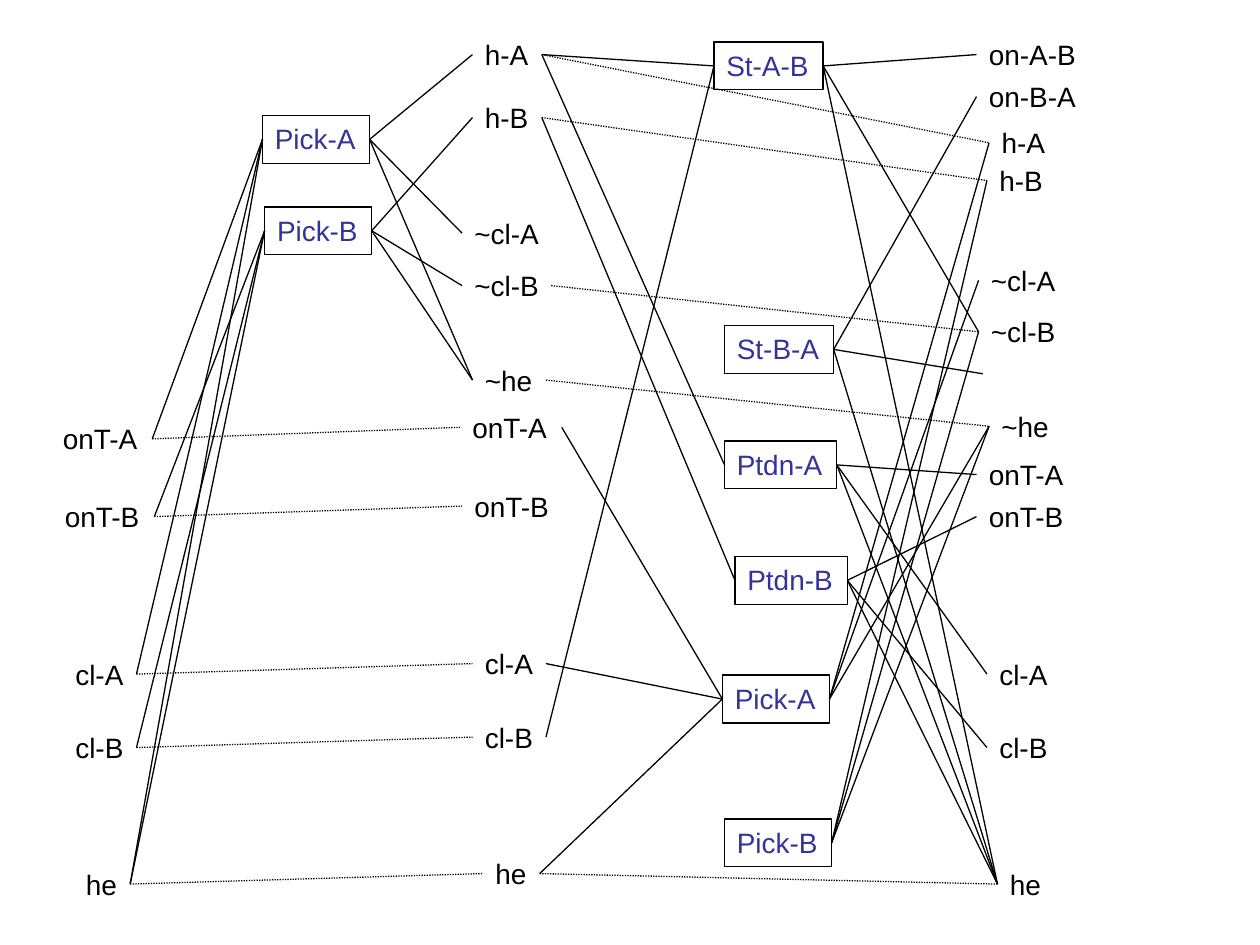
from lxml.etree import SubElement
from pptx import Presentation
from pptx.dml.color import RGBColor
from pptx.enum.dml import MSO_LINE
from pptx.enum.shapes import MSO_CONNECTOR, MSO_SHAPE
from pptx.enum.text import MSO_ANCHOR, MSO_AUTO_SIZE, PP_ALIGN
from pptx.oxml.ns import qn
from pptx.util import Inches, Pt

BLACK = RGBColor(0x00, 0x00, 0x00)
INDIGO = RGBColor(0x33, 0x33, 0x99)
LEFT, RIGHT = 1, 3
COLUMNS, ROWS = 120, 90

WIDTHS = {
    "onT": 9.7, "cl": 7, "he": 5.4, "h": 6.6, "~cl": 8.5, "~he": 7, "on": 10.7,
    "Pick": 10.2, "St": 10.4, "Ptdn": 10.7,
}

START_FACTS = {
    "onT-A": (4.8, 39.6), "onT-B": (5, 47), "cl-A": (6, 62), "cl-B": (6, 69),
    "he": (7, 82),
}
FIRST_ACTIONS = {"Pick-A": (25, 11), "Pick-B": (25.2, 19.7)}
MIDDLE_FACTS = {
    "h-A": (45, 3), "h-B": (45, 9), "~cl-A": (44, 20), "~cl-B": (44, 25),
    "~he": (45, 34), "onT-A": (43.8, 38.5), "onT-B": (44, 46),
    "cl-A": (45, 61), "cl-B": (45, 68), "he": (46, 81),
}
SECOND_ACTIONS = {
    "St-A-B": (68, 4), "St-B-A": (69, 31), "Ptdn-A": (69, 42),
    "Ptdn-B": (70, 53), "Pick-A": (68.8, 64.3), "Pick-B": (69, 78),
}
END_FACTS = {
    "on-A-B": (93, 3), "on-B-A": (93, 7), "h-A": (94.2, 11.4), "h-B": (94, 15),
    "~cl-A": (93.2, 24.5), "~cl-B": (93.2, 29.4), "~he": (94.2, 38.4),
    "onT-A": (93, 43), "onT-B": (93, 47), "cl-A": (94, 62), "cl-B": (94, 69),
    "he": (95, 82),
}

FIRST_NEEDS = {
    "onT-A": ["Pick-A"], "onT-B": ["Pick-B"], "cl-A": ["Pick-A"],
    "cl-B": ["Pick-B"], "he": ["Pick-A", "Pick-B"],
}
FIRST_EFFECTS = {
    "Pick-A": ["h-A", "~cl-A", "~he"], "Pick-B": ["h-B", "~cl-B", "~he"],
}
SECOND_NEEDS = {
    "h-A": ["St-A-B", "Ptdn-A"], "h-B": ["Ptdn-B"], "cl-B": ["St-A-B"],
    "onT-A": ["Pick-A"], "cl-A": ["Pick-A"], "he": ["Pick-A"],
}
SECOND_EFFECTS = {
    "St-A-B": ["on-A-B", "~cl-B", "he"], "St-B-A": ["on-B-A", "he"],
    "Ptdn-A": ["onT-A", "cl-A", "he"], "Ptdn-B": ["onT-B", "cl-B", "he"],
    "Pick-A": ["h-A", "~cl-A", "~he"], "Pick-B": ["h-B", "~cl-B", "~he"],
}
FIRST_KEPT = {name: [name] for name in START_FACTS}
SECOND_KEPT = {name: [name] for name in ("h-A", "h-B", "~cl-B", "~he", "he")}
LOOSE_END = (93.6, 35.6)


class PlanGraph:
    font_name = "Arial"
    font_size = Pt(16)
    line_width = Pt(0.75)
    fact_height = 4.4
    action_height = 4.56

    def __init__(self, prs):
        self.slide = prs.slides.add_slide(prs.slide_layouts[6])
        self.column = prs.slide_width / COLUMNS
        self.row = prs.slide_height / ROWS

    def place(self, x, y):
        return round(x * self.column), round(y * self.row)

    def label(self, sp, name, color):
        tf = sp.text_frame
        tf.word_wrap = False
        tf.auto_size = MSO_AUTO_SIZE.SHAPE_TO_FIT_TEXT
        tf.vertical_anchor = MSO_ANCHOR.TOP
        p = tf.paragraphs[0]
        p.text = name
        p.alignment = PP_ALIGN.LEFT
        p.font.name = self.font_name
        p.font.size = self.font_size
        p.font.color.rgb = color

    def frame(self, name, spot, height):
        width = WIDTHS[name.partition("-")[0]]
        return *self.place(*spot), *self.place(width, height)

    def fact(self, name, spot):
        sp = self.slide.shapes.add_textbox(*self.frame(name, spot, self.fact_height))
        self.label(sp, name, BLACK)
        return sp

    def action(self, name, spot):
        sp = self.slide.shapes.add_shape(
            MSO_SHAPE.RECTANGLE, *self.frame(name, spot, self.action_height))
        sp.shadow.inherit = False
        sp.fill.background()
        sp.line.color.rgb = BLACK
        sp.line.width = self.line_width
        self.label(sp, name, INDIGO)
        return sp

    def facts(self, spots):
        return {name: self.fact(name, spot) for name, spot in spots.items()}

    def actions(self, spots):
        return {name: self.action(name, spot) for name, spot in spots.items()}

    def line(self, source, target=None, end=(0, 0), dotted=False):
        cxn = self.slide.shapes.add_connector(
            MSO_CONNECTOR.STRAIGHT, 0, 0, *self.place(*end))
        cxn.begin_connect(source, RIGHT)
        if target is not None:
            cxn.end_connect(target, LEFT)
        cxn.line.color.rgb = BLACK
        cxn.line.width = self.line_width
        if dotted:
            cxn.line.dash_style = MSO_LINE.ROUND_DOT
        SubElement(cxn._element.spPr, qn("a:effectLst"))

    def links(self, sources, targets, pairs, dotted=False):
        for source, names in pairs.items():
            for target in names:
                self.line(sources[source], targets[target], dotted=dotted)


def main():
    prs = Presentation()
    prs.slide_width, prs.slide_height = Inches(10), Inches(7.5)
    graph = PlanGraph(prs)

    start = graph.facts(START_FACTS)
    first = graph.actions(FIRST_ACTIONS)
    middle = graph.facts(MIDDLE_FACTS)
    second = graph.actions(SECOND_ACTIONS)
    end = graph.facts(END_FACTS)

    graph.links(start, first, FIRST_NEEDS)
    graph.links(first, middle, FIRST_EFFECTS)
    graph.links(start, middle, FIRST_KEPT, dotted=True)
    graph.links(middle, second, SECOND_NEEDS)
    graph.links(second, end, SECOND_EFFECTS)
    graph.links(middle, end, SECOND_KEPT, dotted=True)
    graph.line(second["St-B-A"], end=LOOSE_END)

    prs.save("out.pptx")


if __name__ == "__main__":
    main()
